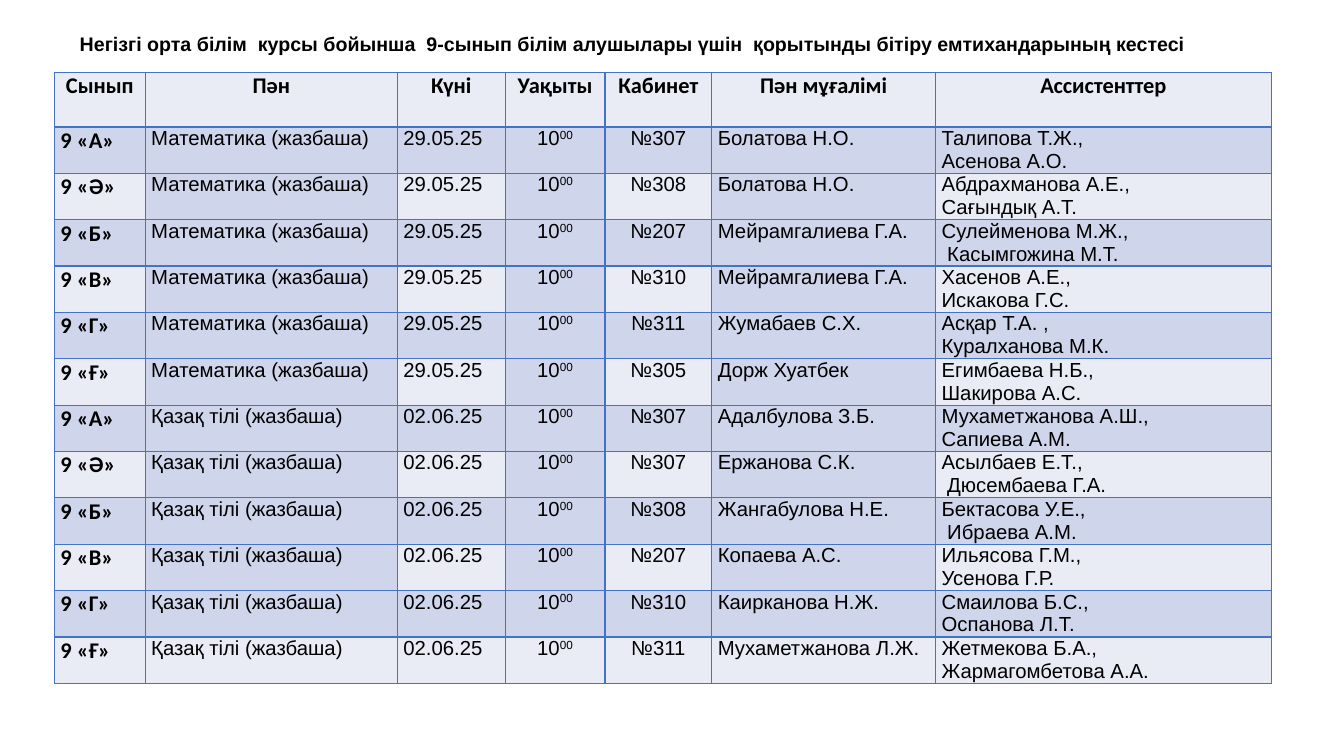
from dataclasses import dataclass

from lxml.etree import SubElement
from pptx import Presentation
from pptx.dml.color import RGBColor
from pptx.enum.text import MSO_ANCHOR, PP_ALIGN as Align
from pptx.oxml.ns import qn
from pptx.util import Inches, Pt

COLORS = {"text": "000000", "band": "CFD5EA", "light": "E9EBF5", "border": "4472C4"}
TITLE = ("Негізгі орта білім  курсы бойынша  9-сынып білім алушылары үшін  "
         "қорытынды бітіру емтихандарының кестесі")
MATH, KAZAKH = "Математика (жазбаша)", "Қазақ тілі (жазбаша)"
MATH_DAY, KAZAKH_DAY = "29.05.25", "02.06.25"
HOUR, MINUTES = "10", "00"
HEADER_HEIGHT, EXAM_HEIGHT = 0.54, 0.46


@dataclass(frozen=True)
class Column:
    heading: str
    width: float
    align: Align = Align.LEFT


@dataclass(frozen=True)
class Exam:
    grade: str
    subject: str
    day: str
    room: str
    teacher: str
    assistants: str

    def texts(self) -> list[str]:
        return [f"9 «{self.grade}»", self.subject, self.day, HOUR,
                f"№{self.room}", self.teacher, self.assistants]


COLUMNS = [
    Column("Сынып", 0.9),
    Column("Пән", 2.5),
    Column("Күні", 1.07),
    Column("Уақыты", 0.99, Align.CENTER),
    Column("Кабинет", 1.06, Align.CENTER),
    Column("Пән мұғалімі", 2.22),
    Column("Ассистенттер", 3.33),
]
GRADE_COLUMN, TIME_COLUMN = 0, 3

EXAMS = [
    Exam("А", MATH, MATH_DAY, "307", "Болатова Н.О.", "Талипова Т.Ж.,\nАсенова А.О."),
    Exam("Ә", MATH, MATH_DAY, "308", "Болатова Н.О.", "Абдрахманова А.Е.,\nСағындық А.Т."),
    Exam("Б", MATH, MATH_DAY, "207", "Мейрамгалиева Г.А.", "Сулейменова М.Ж.,\n Касымгожина М.Т."),
    Exam("В", MATH, MATH_DAY, "310", "Мейрамгалиева Г.А.", "Хасенов А.Е.,\nИскакова Г.С."),
    Exam("Г", MATH, MATH_DAY, "311", "Жумабаев С.Х.", "Асқар Т.А. ,\nКуралханова М.К."),
    Exam("Ғ", MATH, MATH_DAY, "305", "Дорж Хуатбек", "Егимбаева Н.Б.,\nШакирова А.С."),
    Exam("А", KAZAKH, KAZAKH_DAY, "307", "Адалбулова З.Б.", "Мухаметжанова А.Ш.,\nСапиева А.М."),
    Exam("Ә", KAZAKH, KAZAKH_DAY, "307", "Ержанова С.К.", "Асылбаев Е.Т.,\n Дюсембаева Г.А."),
    Exam("Б", KAZAKH, KAZAKH_DAY, "308", "Жангабулова Н.Е.", "Бектасова У.Е.,\n Ибраева А.М."),
    Exam("В", KAZAKH, KAZAKH_DAY, "207", "Копаева А.С.", "Ильясова Г.М.,\nУсенова Г.Р."),
    Exam("Г", KAZAKH, KAZAKH_DAY, "310", "Каирканова Н.Ж.", "Смаилова Б.С.,\nОспанова Л.Т."),
    Exam("Ғ", KAZAKH, KAZAKH_DAY, "311", "Мухаметжанова Л.Ж.", "Жетмекова Б.А., Жармагомбетова А.А."),
]


def format_paragraph(paragraph, font_name: str, size: float, bold: bool, align: Align) -> None:
    paragraph.alignment = align
    font = paragraph.font
    font.name, font.size, font.bold = font_name, Pt(size), bold
    font.color.rgb = RGBColor.from_string(COLORS["text"])


def add_borders(cell, top_width: float) -> None:
    properties = cell._tc.get_or_add_tcPr()
    for side in "LRTB":
        width = top_width if side == "T" else 1
        border = SubElement(properties, qn(f"a:ln{side}"), w=str(Pt(width)))
        SubElement(SubElement(border, qn("a:solidFill")), qn("a:srgbClr"), val=COLORS["border"])


def cell_color(row: int, column: int) -> str:
    if row in (0, len(EXAMS)):
        return COLORS["light"]
    return COLORS["light" if row % 2 == 0 and column % 2 == 0 else "band"]


def fill_cell(cell, text: str, row: int, column: int) -> None:
    cell.margin_left = cell.margin_right = Inches(0.06)
    cell.margin_top = cell.margin_bottom = 0
    add_borders(cell, 2 if row == len(EXAMS) else 1)
    cell.fill.solid()
    cell.fill.fore_color.rgb = RGBColor.from_string(cell_color(row, column))
    cell.text = text
    if row and column == TIME_COLUMN:
        minutes = cell.text_frame.paragraphs[0].add_run()
        minutes.text = MINUTES
        minutes._r.get_or_add_rPr().set("baseline", "30000")
    strong = row == 0 or column == GRADE_COLUMN
    align = COLUMNS[column].align if row else Align.CENTER
    for paragraph in cell.text_frame.paragraphs:
        format_paragraph(paragraph, "Calibri" if strong else "Arial",
                         16 if strong else 14.5, strong, align)


def add_title(slide) -> None:
    title = slide.shapes.title
    title.left, title.top = Inches(0.69), Inches(0.25)
    title.width, title.height = Inches(11.24), Inches(0.37)
    frame = title.text_frame
    frame.text = TITLE
    frame.word_wrap = False
    frame.vertical_anchor = MSO_ANCHOR.MIDDLE
    format_paragraph(frame.paragraphs[0], "Arial", 14, True, Align.LEFT)


def add_schedule(slide) -> None:
    rows = [[column.heading for column in COLUMNS], *(exam.texts() for exam in EXAMS)]
    schedule = slide.shapes.add_table(
        len(rows), len(COLUMNS), Inches(0.54), Inches(0.72), Inches(12.07),
        Inches(HEADER_HEIGHT + EXAM_HEIGHT * len(EXAMS))).table
    schedule.first_row = schedule.horz_banding = False
    for index, column in enumerate(COLUMNS):
        schedule.columns[index].width = Inches(column.width)
    for row, texts in enumerate(rows):
        schedule.rows[row].height = Inches(EXAM_HEIGHT if row else HEADER_HEIGHT)
        for column, text in enumerate(texts):
            fill_cell(schedule.cell(row, column), text, row, column)


def main() -> None:
    """Build the exam schedule slide and save it."""
    deck = Presentation()
    deck.slide_width, deck.slide_height = Inches(13.33), Inches(7.5)
    slide = deck.slides.add_slide(deck.slide_layouts[5])
    add_title(slide)
    add_schedule(slide)
    deck.save("out.pptx")


if __name__ == "__main__":
    main()
